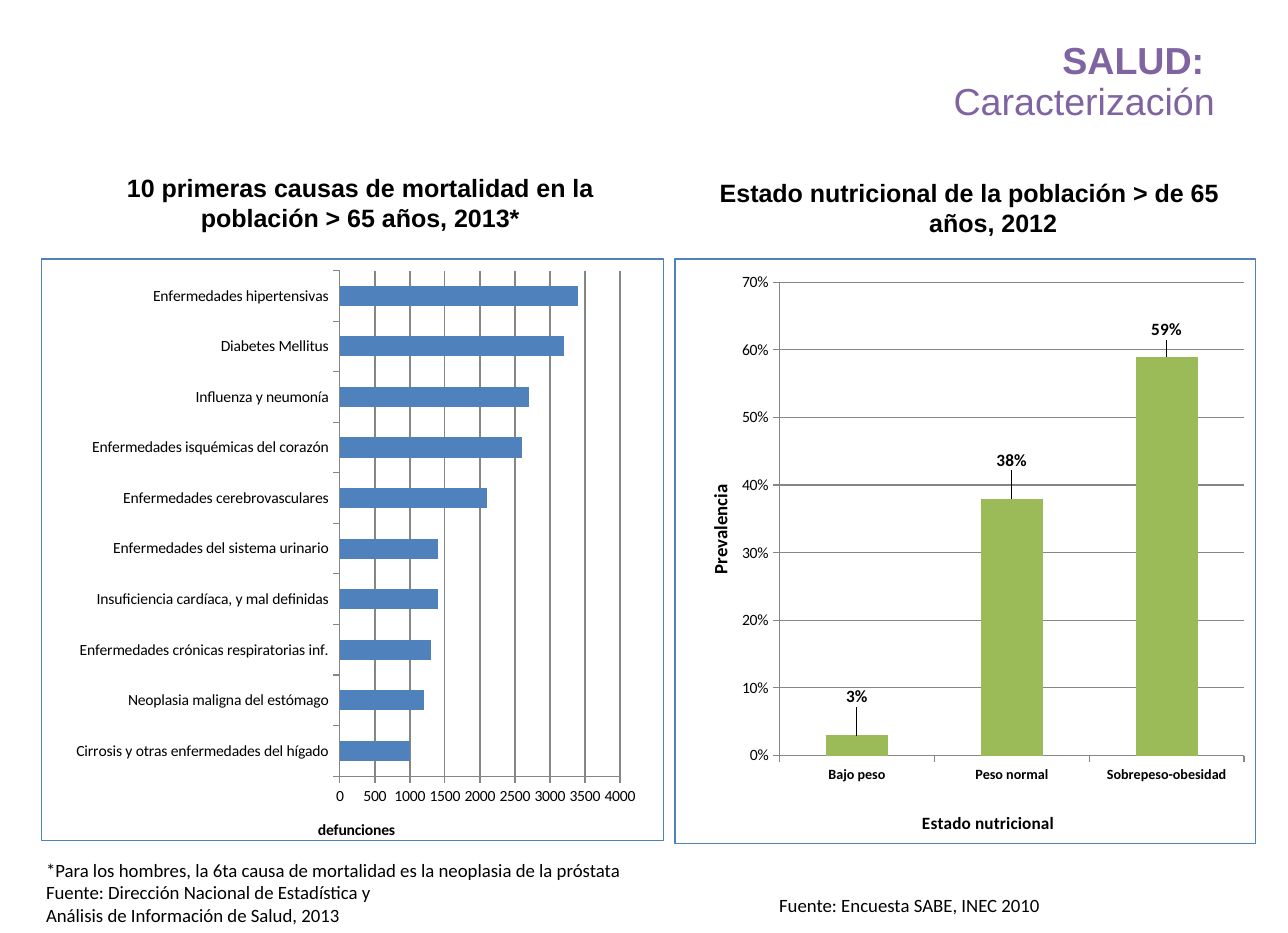
import pptx
import pptx.chart.data
import pptx.dml.color
import pptx.enum.chart
import pptx.enum.text
import pptx.oxml
import pptx.oxml.ns
import pptx.util
from dataclasses import dataclass

qn = pptx.oxml.ns.qn
NS = pptx.oxml.ns.nsdecls("c", "a")
XL = pptx.enum.chart
ALIGN = pptx.enum.text.PP_ALIGN
ANCHOR = pptx.enum.text.MSO_ANCHOR
AUTO = pptx.enum.text.MSO_AUTO_SIZE
Pt = pptx.util.Pt
Inches = pptx.util.Inches


@dataclass(frozen=True)
class Theme:
    text: str = "000000"
    title: str = "8064A2"
    deaths: str = "4F81BD"
    nutrition: str = "9BBB59"
    border: str = "4F81BD"
    grid: str = "868686"
    head_font: str = "Arial"
    body_font: str = "Calibri"
    title_size: int = 24
    head_size: int = 16
    note_size: int = 12
    axis_title: int = 11
    small: int = 10
    tiny: int = 9


def rgb(color):
    return pptx.dml.color.RGBColor.from_string(color)


def set_layout(parent, index, edge=True, inner=False, **shares):
    """Place a chart part by shares of the chart's size."""
    items = '<c:layoutTarget val="inner"/>' if inner else ""
    if edge:
        items += '<c:xMode val="edge"/><c:yMode val="edge"/>'
    items += "".join(f'<c:{k} val="{v}"/>' for k, v in shares.items())
    old = parent.find(qn("c:layout"))
    if old is not None:
        parent.remove(old)
    parent.insert(index, pptx.oxml.parse_xml(
        f"<c:layout {NS}><c:manualLayout>{items}</c:manualLayout></c:layout>"))


class Page:
    """Positions and sizes are percentages of the slide's width and height."""

    def __init__(self, prs, theme):
        self.prs, self.t = prs, theme
        self.s = prs.slides.add_slide(prs.slide_layouts[5])

    def box(self, x, y, w, h):
        W, H = self.prs.slide_width, self.prs.slide_height
        return [round(v * side / 100) for v, side in ((x, W), (y, H), (w, W), (h, H))]

    def style(self, font, size, bold=False, color=None, name=None):
        font.size, font.bold = Pt(size), bold
        font.name = name or self.t.body_font
        font.color.rgb = rgb(color or self.t.text)

    def run(self, p, text, *args, **kwargs):
        r = p.add_run()
        r.text = text
        self.style(r.font, *args, **kwargs)

    def title(self, at, lines):
        sp = self.s.shapes.title
        sp.left, sp.top, sp.width, sp.height = self.box(*at)
        tf = sp.text_frame
        tf.auto_size, tf.vertical_anchor = AUTO.NONE, ANCHOR.MIDDLE
        for i, (text, bold) in enumerate(lines):
            p = tf.add_paragraph() if i else tf.paragraphs[0]
            p.alignment, p.line_spacing = ALIGN.RIGHT, 0.9
            p.space_before = Pt(0)
            self.run(p, text, self.t.title_size, bold, self.t.title, self.t.head_font)

    def text_box(self, at):
        tf = self.s.shapes.add_textbox(*self.box(*at)).text_frame
        tf.word_wrap = True
        return tf

    def heading(self, at, text, hanging):
        tf = self.text_box(at)
        tf.margin_left = tf.margin_right = Inches(0.11)
        tf.margin_top = tf.margin_bottom = Inches(0.06)
        p = tf.paragraphs[0]
        p.alignment = ALIGN.CENTER
        pPr = p._p.get_or_add_pPr()
        pPr.set("marL", str(Inches(0.42)))
        pPr.set("indent", str(Inches(-hanging)))
        self.run(p, text, self.t.head_size, True, name=self.t.head_font)

    def note(self, at, lines):
        tf = self.text_box(at)
        tf.auto_size = AUTO.SHAPE_TO_FIT_TEXT
        for i, text in enumerate(lines):
            p = tf.add_paragraph() if i else tf.paragraphs[0]
            self.run(p, text, self.t.note_size)

    def chart(self, at, kind, rows, color, plot_at, top, step, fmt):
        data = pptx.chart.data.CategoryChartData(number_format=fmt)
        data.categories = [name for name, _ in rows]
        data.add_series("Series 1", [value for _, value in rows])
        chart = self.s.shapes.add_chart(kind, *self.box(*at), data).chart
        chart.has_title = chart.has_legend = False
        self.style(chart.font, self.t.small)
        # Frame and plot area
        space = chart._chartSpace
        space.find(qn("c:chart")).addnext(pptx.oxml.parse_xml(
            f'<c:spPr {NS}><a:noFill/><a:ln w="{Pt(0.75)}"><a:solidFill>'
            f'<a:srgbClr val="{self.t.border}"/></a:solidFill></a:ln></c:spPr>'))
        set_layout(space.find(".//" + qn("c:plotArea")), 0, inner=True,
                   **dict(zip("xywh", plot_at)))
        # Bars
        plot = chart.plots[0]
        plot.vary_by_categories, plot.gap_width = False, 150
        if kind == XL.XL_CHART_TYPE.BAR_STACKED:
            plot.overlap = 100
        fill = plot.series[0].format.fill
        fill.solid()
        fill.fore_color.rgb = rgb(color)
        # Axes
        value = chart.value_axis
        value.minimum_scale, value.maximum_scale, value.major_unit = 0, top, step
        value.has_major_gridlines = True
        value.tick_labels.number_format = fmt
        value.tick_labels.number_format_is_linked = False
        for axis in (chart.category_axis, value):
            axis.major_tick_mark = XL.XL_TICK_MARK.OUTSIDE
            axis.minor_tick_mark = XL.XL_TICK_MARK.NONE
            self.style(axis.tick_labels.font, self.t.small)
        for part in (chart.category_axis, value, value.major_gridlines):
            part.format.line.color.rgb = rgb(self.t.grid)
            part.format.line.width = Pt(0.75)
        return chart

    def axis_title(self, axis, text, size, x, y):
        title = axis.axis_title
        self.run(title.text_frame.paragraphs[0], text, size, True)
        set_layout(title._element, 1, x=x, y=y)

    def value_labels(self, chart, lifts):
        series = chart.plots[0].series[0]
        for i, lift in enumerate(lifts):
            label = series.points[i].data_label
            self.style(label.font, self.t.axis_title, True)
            label.position = XL.XL_LABEL_POSITION.OUTSIDE_END
            set_layout(label._dLbl, 1, edge=False, x=0, y=-lift)


def main():
    prs = pptx.Presentation()
    prs.slide_width, prs.slide_height = Inches(11.42), Inches(8.27)
    t = Theme()
    page = Page(prs, t)
    page.title((31.7, 2.42, 63.49, 12.94), [("SALUD: ", True), ("Caracterización", False)])

    # Mortality
    page.heading((3.06, 17.78, 46.15, 7.74),
                 "10 primeras causas de mortalidad en la población > 65 años, 2013*", 0)
    causes = [
        ("Cirrosis y otras enfermedades del hígado", 1000),
        ("Neoplasia maligna del estómago", 1200),
        ("Enfermedades crónicas respiratorias inf.", 1300),
        ("Insuficiencia cardíaca, y mal definidas", 1400),
        ("Enfermedades del sistema urinario", 1400),
        ("Enfermedades cerebrovasculares", 2100),
        ("Enfermedades isquémicas del corazón", 2600),
        ("Influenza y neumonía", 2700),
        ("Diabetes Mellitus", 3200),
        ("Enfermedades hipertensivas", 3400),
    ]
    deaths = page.chart((3.15, 27.69, 48.42, 62.76), XL.XL_CHART_TYPE.BAR_STACKED, causes,
                        t.deaths, (0.48, 0.02, 0.45, 0.87), 4000, 500, "General")
    page.axis_title(deaths.value_axis, "defunciones", t.small, 0.44, 0.96)
    page.note((2.71, 91.41, 66.29, 8.59), [
        "*Para los hombres, la 6ta causa de mortalidad es la neoplasia de la próstata",
        "Fuente: Dirección Nacional de Estadística y",
        "Análisis de Información de Salud, 2013"])

    # Nutrition
    page.heading((52.19, 18.26, 46.15, 7.74),
                 "Estado nutricional de la población > de 65 años, 2012", 0.42)
    states = [("Bajo peso", 0.03), ("Peso normal", 0.38), ("Sobrepeso-obesidad", 0.59)]
    nutrition = page.chart((52.36, 27.69, 45.18, 62.76), XL.XL_CHART_TYPE.COLUMN_CLUSTERED,
                           states, t.nutrition, (0.18, 0.04, 0.8, 0.81), 0.7, 0.1, "0%")
    page.style(nutrition.category_axis.tick_labels.font, t.tiny, True)
    page.axis_title(nutrition.category_axis, "Estado nutricional", t.axis_title, 0.42, 0.94)
    page.axis_title(nutrition.value_axis, "Prevalencia", t.note_size, 0.05, 0.38)
    page.value_labels(nutrition, (0.04, 0.04, 0.02))
    page.note((59.63, 95.16, 38.5, 3.63), ["Fuente: Encuesta SABE, INEC 2010"])

    prs.save("out.pptx")


if __name__ == "__main__":
    main()
